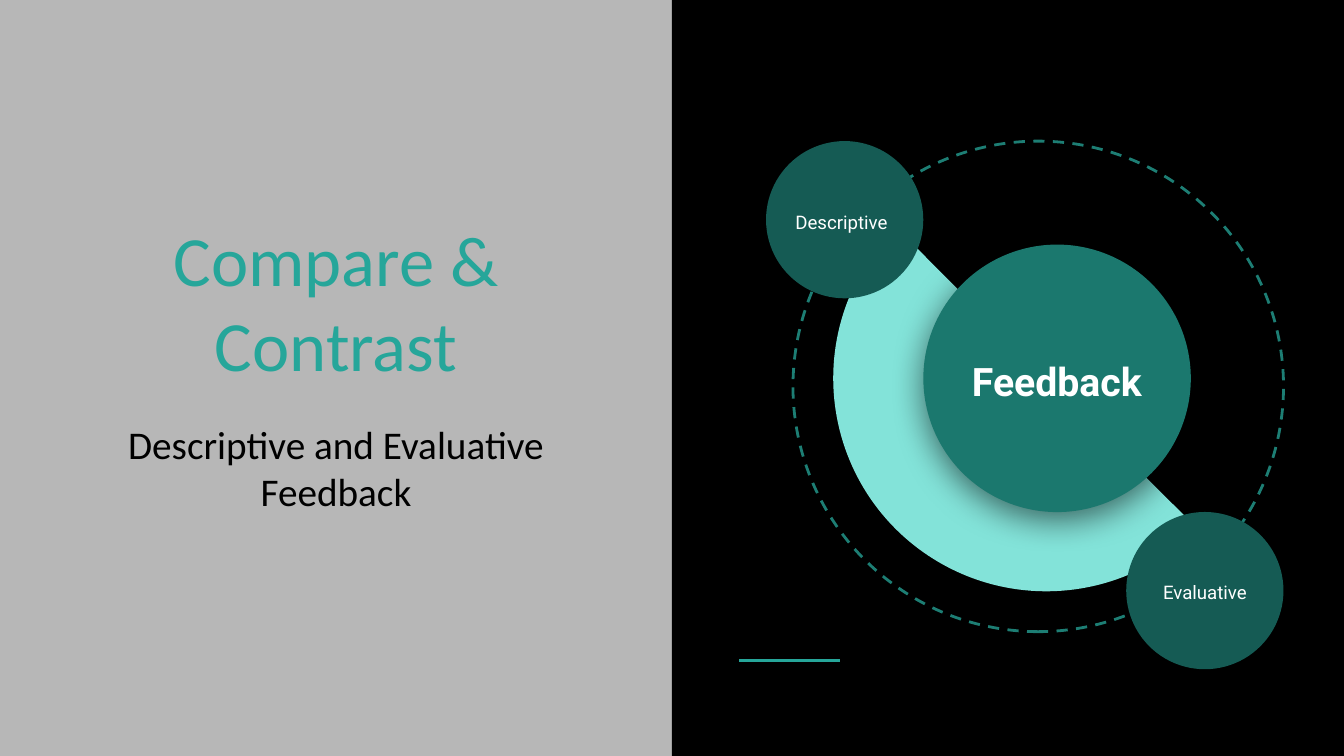
from dataclasses import dataclass
from lxml import etree
from pptx import Presentation, util as u
from pptx.dml.color import RGBColor
from pptx.enum import dml, shapes, text
from pptx.oxml.ns import qn


@dataclass(frozen=True)
class Theme:
    back: str = "B7B7B7"
    dark: str = "000000"
    light: str = "FFFFFF"
    accent: str = "26A69A"
    ring: str = "1D7E74"
    wedge: str = "83E3D9"
    hub: str = "1B786E"
    node: str = "155B54"
    sans: str = "Calibri"
    label: str = "Roboto"
    title: float = 37.8
    head: float = 21
    small: float = 10
    line: float = 1.5


class Deck:
    unit = 0.1

    def __init__(self, theme, wide, high):
        self.theme = theme
        self.prs = Presentation()
        self.prs.slide_width, self.prs.slide_height = self.grid(wide, high)
        self.slide = self.prs.slides.add_slide(self.prs.slide_layouts[6])
        self.paint(self.slide.background.fill, theme.back)

    def grid(self, *cells):
        return [u.Inches(cell * self.unit) for cell in cells]

    def paint(self, fill, color):
        fill.solid()
        fill.fore_color.rgb = RGBColor.from_string(color)

    def shape(self, kind, box, fill=None):
        item = self.slide.shapes.add_shape(kind, *self.grid(*box))
        item.shadow.inherit = False
        item.line.fill.background()
        if fill:
            self.paint(item.fill, fill)
        else:
            item.fill.background()
        return item

    def disc(self, x, y, size, fill=None, kind=shapes.MSO_SHAPE.OVAL):
        return self.shape(kind, (x - size / 2, y - size / 2, size, size), fill)

    def ring(self, x, y, size):
        item = self.disc(x, y, size)
        item.rotation = 270
        self.paint(item.line.fill, self.theme.ring)
        item.line.width = u.Pt(self.theme.line)
        item.line.dash_style = dml.MSO_LINE.DASH

    def wedge(self, x, y, size, start, end):
        item = self.disc(x, y, size, self.theme.wedge, shapes.MSO_SHAPE.PIE)
        for i, angle in enumerate((start, end)):
            item.adjustments[i] = angle * 0.6

    def shade(self, item, blur, drop, alpha):
        effects = item._element.spPr.find(qn("a:effectLst"))
        shadow = etree.SubElement(effects, qn("a:outerShdw"), {
            "blurRad": str(u.Pt(blur)), "dist": str(u.Pt(drop)),
            "dir": "5400000", "algn": "bl", "rotWithShape": "0"})
        color = etree.SubElement(shadow, qn("a:srgbClr"), val=self.theme.dark)
        etree.SubElement(color, qn("a:alpha"), val=str(alpha * 1000))

    def rule(self, x, y, size):
        item = self.slide.shapes.add_connector(
            shapes.MSO_CONNECTOR.STRAIGHT, *self.grid(x, y, x + size, y))
        self.paint(item.line.fill, self.theme.accent)
        item.line.width = u.Pt(self.theme.line)
        etree.SubElement(item._element.spPr, qn("a:effectLst"))

    def text(self, words, box, color, font, anchor="MIDDLE", align="CENTER", space=1.15):
        frame = self.slide.shapes.add_textbox(*self.grid(*box)).text_frame
        edges = {f"margin_{side}": u.Inches(0.1) for side in ("left", "top", "right", "bottom")}
        style = {"word_wrap": True, "vertical_anchor": text.MSO_ANCHOR[anchor], **edges}
        for name, value in style.items():
            setattr(frame, name, value)
        para = frame.paragraphs[0]
        para.alignment = text.PP_ALIGN[align]
        para.line_spacing = space
        run = para.add_run()
        run.text = words
        for name, value in font.items():
            setattr(run.font, name, value)
        self.paint(run.font.fill, color)


def main():
    theme = Theme()
    deck = Deck(theme, 100, 56.25)
    deck.shape(shapes.MSO_SHAPE.RECTANGLE, (50, 0, 50, 56.25), theme.dark)
    deck.rule(55, 49.15, 7.5)

    title = {"name": theme.sans, "size": u.Pt(theme.title)}
    lead = {"name": theme.sans, "size": u.Pt(theme.head)}
    strong = {"name": theme.label, "size": u.Pt(theme.head), "bold": True}
    small = {"name": theme.label, "size": u.Pt(theme.small)}
    deck.text("Compare & Contrast", (2.9, 15.1, 44.2, 14.6), theme.accent, title, "BOTTOM", space=1.0)
    deck.text("Descriptive and Evaluative Feedback", (2.9, 30.3, 44.2, 14.7),
              theme.dark, lead, "TOP", space=1.0)

    deck.ring(77.25, 28.75, 36.5)
    deck.wedge(77.85, 28.15, 31.7, 44.83, 225.18)
    hub = deck.disc(78.65, 28.15, 19.9, theme.hub)
    deck.shade(hub, 18, 4, 55)
    deck.text("Feedback", (71.3, 23.6, 14.7, 9), theme.light, strong)

    nodes = (
        ("Descriptive", 62.85, 16.35, (58.2, 12.4, 9.3, 8), "LEFT"),
        ("Evaluative", 89.65, 43.95, (85.5, 39.9, 8.3, 8), "CENTER"),
    )
    for words, x, y, box, align in nodes:
        deck.disc(x, y, 11.7, theme.node)
        deck.text(words, box, theme.light, small, align=align)

    deck.prs.save("out.pptx")


if __name__ == "__main__":
    main()
